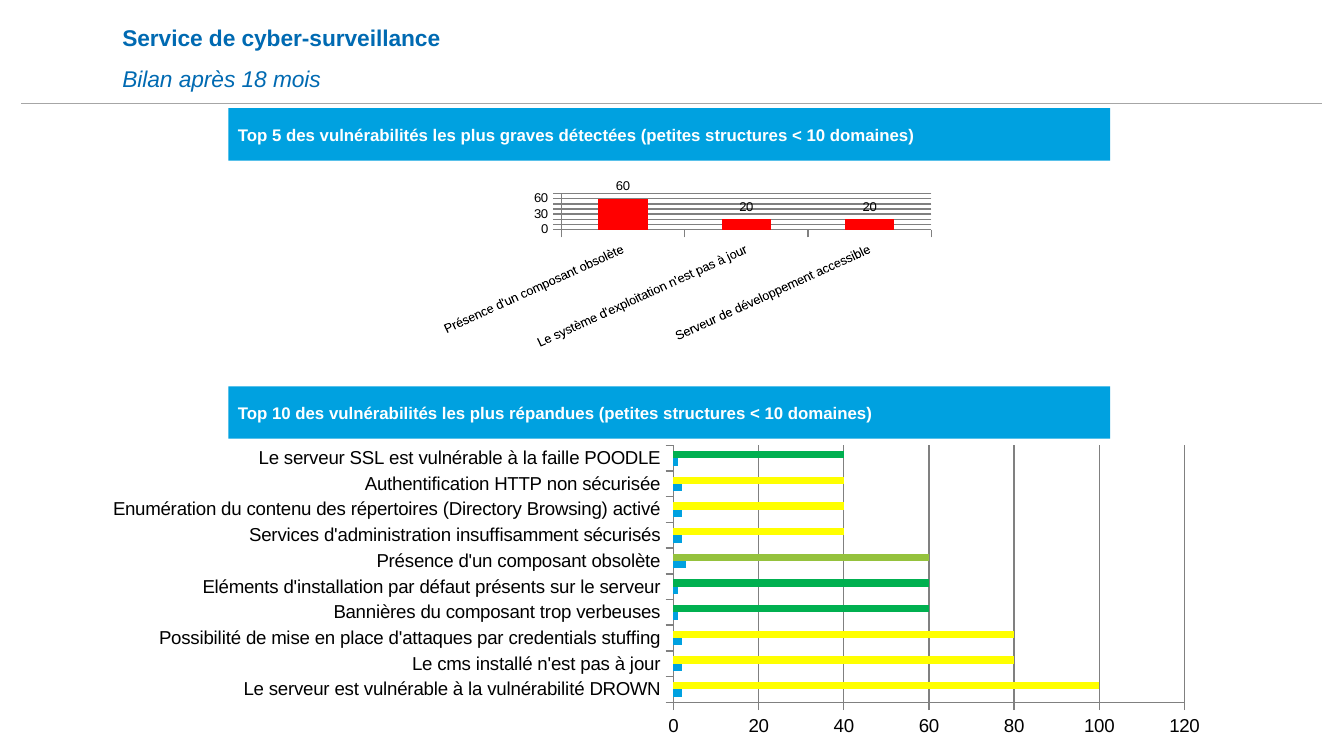
from dataclasses import dataclass, field
from lxml.etree import SubElement
from pptx import Presentation
from pptx.chart.data import CategoryChartData
from pptx.dml.color import RGBColor
from pptx.enum.chart import XL_CHART_TYPE, XL_LABEL_POSITION, XL_TICK_MARK
from pptx.enum.shapes import MSO_CONNECTOR, MSO_SHAPE
from pptx.enum.text import MSO_ANCHOR, PP_ALIGN
from pptx.oxml.ns import qn
from pptx.util import Inches, Pt

WIDE = Inches(10)
HIGH = WIDE * 9 // 16
FONT = "Arial"
NAVY = RGBColor(0x00, 0x6A, 0xB2)
SKY = RGBColor(0x00, 0xA1, 0xE0)
WHITE = RGBColor(0xFF, 0xFF, 0xFF)
BLACK = RGBColor(0x00, 0x00, 0x00)
DARK = RGBColor(0x57, 0x57, 0x57)
SILVER = RGBColor(0xA6, 0xA6, 0xA6)
GREY = RGBColor(0x80, 0x80, 0x80)
RED = RGBColor(0xFF, 0x00, 0x00)
LIME = RGBColor(0x95, 0xC2, 0x3D)
GREEN = RGBColor(0x00, 0xB0, 0x50)
YELLOW = RGBColor(0xFF, 0xFF, 0x00)


@dataclass
class Box:
    left: float
    top: float
    width: float
    height: float

    def place(self) -> tuple[int, int, int, int]:
        return (int(self.left / 100 * WIDE), int(self.top / 100 * HIGH),
                int(self.width / 100 * WIDE), int(self.height / 100 * HIGH))


@dataclass
class Banner:
    text: str
    top: float


@dataclass
class Series:
    values: list[int]
    color: RGBColor
    points: dict[int, RGBColor] = field(default_factory=dict)


@dataclass
class Graph:
    kind: XL_CHART_TYPE
    box: Box
    plot: Box
    names: list[str]
    series: list[Series]
    top: int
    step: int
    size: float
    turn: int = 0
    labels: bool = False


BANNERS = [
    Banner("Top 5 des vulnérabilités les plus graves détectées (petites structures < 10 domaines)", 14.3),
    Banner("Top 10 des vulnérabilités les plus répandues (petites structures < 10 domaines)", 51.1),
]

COMMON = Graph(
    XL_CHART_TYPE.BAR_CLUSTERED, Box(6.7, 58.2, 84.3, 40), Box(51.5, 1.8, 45.1, 85),
    ["Le serveur est vulnérable à la vulnérabilité DROWN",
     "Le cms installé n'est pas à jour",
     "Possibilité de mise en place d'attaques par credentials stuffing",
     "Bannières du composant trop verbeuses",
     "Eléments d'installation par défaut présents sur le serveur",
     "Présence d'un composant obsolète",
     "Services d'administration insuffisamment sécurisés",
     "Enumération du contenu des répertoires (Directory Browsing) activé",
     "Authentification HTTP non sécurisée",
     "Le serveur SSL est vulnérable à la faille POODLE"],
    [Series([2, 2, 2, 1, 1, 3, 2, 2, 2, 1], SKY),
     Series([100, 80, 80, 60, 60, 60, 40, 40, 40, 40], LIME,
            dict.fromkeys((0, 1, 2, 6, 7, 8), YELLOW) | dict.fromkeys((3, 4, 9), GREEN))],
    120, 20, 10)

SEVERE = Graph(
    XL_CHART_TYPE.COLUMN_CLUSTERED, Box(29.9, 23.8, 40.2, 26.3), Box(29.5, 4.5, 68.5, 18.6),
    ["Présence d'un composant obsolète",
     "Le système d'exploitation n'est pas à jour",
     "Serveur de développement accessible"],
    [Series([60, 20, 20], RED)], 70, 10, 7, -25, True)


def add_rule(slide, color: RGBColor) -> None:
    y = int(0.137 * HIGH)
    rule = slide.shapes.add_connector(
        MSO_CONNECTOR.STRAIGHT, int(0.016 * WIDE), y, int(0.984 * WIDE), y)
    rule.line.color.rgb = color
    rule.line.width = Pt(0.25)
    SubElement(rule.element.spPr, qn("a:effectLst"))


def add_title(slide) -> None:
    frame = slide.shapes.add_textbox(*Box(9.1, 1.7, 88.2, 10.5).place()).text_frame
    frame.word_wrap = True
    frame.vertical_anchor = MSO_ANCHOR.BOTTOM
    frame.margin_left = frame.margin_right = frame.margin_top = frame.margin_bottom = 0
    para = frame.paragraphs[0]
    para.text = "Service de cyber-surveillance\vBilan après 18 mois"
    para.line_spacing = Pt(22)
    for run, bold in zip(para.runs, (True, False)):
        run.font.name, run.font.size = FONT, Pt(12.15)
        run.font.color.rgb = NAVY
        run.font.bold, run.font.italic = bold, not bold


def add_banner(slide, banner: Banner) -> None:
    shape = slide.shapes.add_shape(
        MSO_SHAPE.ROUNDED_RECTANGLE, *Box(17, banner.top, 65.6, 6.94).place())
    shape.adjustments[0] = 0
    shape.shadow.inherit = False
    shape.fill.solid()
    shape.fill.fore_color.rgb = SKY
    shape.line.fill.background()
    frame = shape.text_frame
    frame.word_wrap = True
    frame.vertical_anchor = MSO_ANCHOR.MIDDLE
    frame.margin_left = frame.margin_right = Inches(0.07)
    frame.margin_top = frame.margin_bottom = Inches(0.04)
    frame.text = banner.text
    para = frame.paragraphs[0]
    para.alignment = PP_ALIGN.LEFT
    font = para.runs[0].font
    font.name, font.size, font.bold = FONT, Pt(9), True
    font.color.rgb = WHITE


def set_plot(chart, box: Box) -> None:
    area = chart.element.chart.plotArea
    for old in area.findall(qn("c:layout")):
        area.remove(old)
    layout = area.makeelement(qn("c:layout"), {})
    area.insert(0, layout)
    manual = SubElement(layout, qn("c:manualLayout"))
    parts = [("layoutTarget", "inner"), ("xMode", "edge"), ("yMode", "edge"),
             ("x", box.left / 100), ("y", box.top / 100),
             ("w", box.width / 100), ("h", box.height / 100)]
    for tag, value in parts:
        SubElement(manual, qn(f"c:{tag}")).set("val", str(value))


def turn_names(chart, graph: Graph) -> None:
    chart.category_axis.tick_labels.font.size = Pt(graph.size)
    body = chart.element.find(f".//{qn('c:catAx')}/{qn('c:txPr')}/{qn('a:bodyPr')}")
    body.set("rot", str(graph.turn * 60000))
    body.set("vert", "horz")


def add_graph(slide, graph: Graph) -> None:
    data = CategoryChartData()
    data.categories = graph.names
    for index, item in enumerate(graph.series, 1):
        data.add_series(f"Series {index}", item.values)
    chart = slide.shapes.add_chart(graph.kind, *graph.box.place(), data).chart
    chart.has_legend = chart.has_title = False
    chart.font.name, chart.font.size = FONT, Pt(graph.size)
    chart.font.color.rgb = BLACK
    set_plot(chart, graph.plot)
    plot = chart.plots[0]
    plot.gap_width, plot.overlap = 150, 0
    plot.vary_by_categories = False
    for series, item in zip(plot.series, graph.series):
        series.invert_if_negative = False
        series.format.fill.solid()
        series.format.fill.fore_color.rgb = item.color
        for index, color in item.points.items():
            fill = series.points[index].format.fill
            fill.solid()
            fill.fore_color.rgb = color
    if graph.labels:
        plot.has_data_labels = True
        plot.data_labels.show_value = True
        plot.data_labels.position = XL_LABEL_POSITION.OUTSIDE_END
    for axis in (chart.category_axis, chart.value_axis):
        axis.major_tick_mark = XL_TICK_MARK.OUTSIDE
        axis.minor_tick_mark = XL_TICK_MARK.NONE
        axis.format.line.color.rgb = GREY
    scale = chart.value_axis
    scale.minimum_scale, scale.maximum_scale = 0, graph.top
    scale.major_unit = graph.step
    scale.has_major_gridlines = True
    scale.major_gridlines.format.line.color.rgb = GREY
    if graph.turn:
        turn_names(chart, graph)


def main() -> None:
    deck = Presentation()
    deck.slide_width, deck.slide_height = WIDE, HIGH
    slide = deck.slides.add_slide(deck.slide_layouts[6])
    for color in (DARK, SILVER):
        add_rule(slide, color)
    add_title(slide)
    for banner in BANNERS:
        add_banner(slide, banner)
    for graph in (COMMON, SEVERE):
        add_graph(slide, graph)
    deck.save("out.pptx")


if __name__ == "__main__":
    main()
